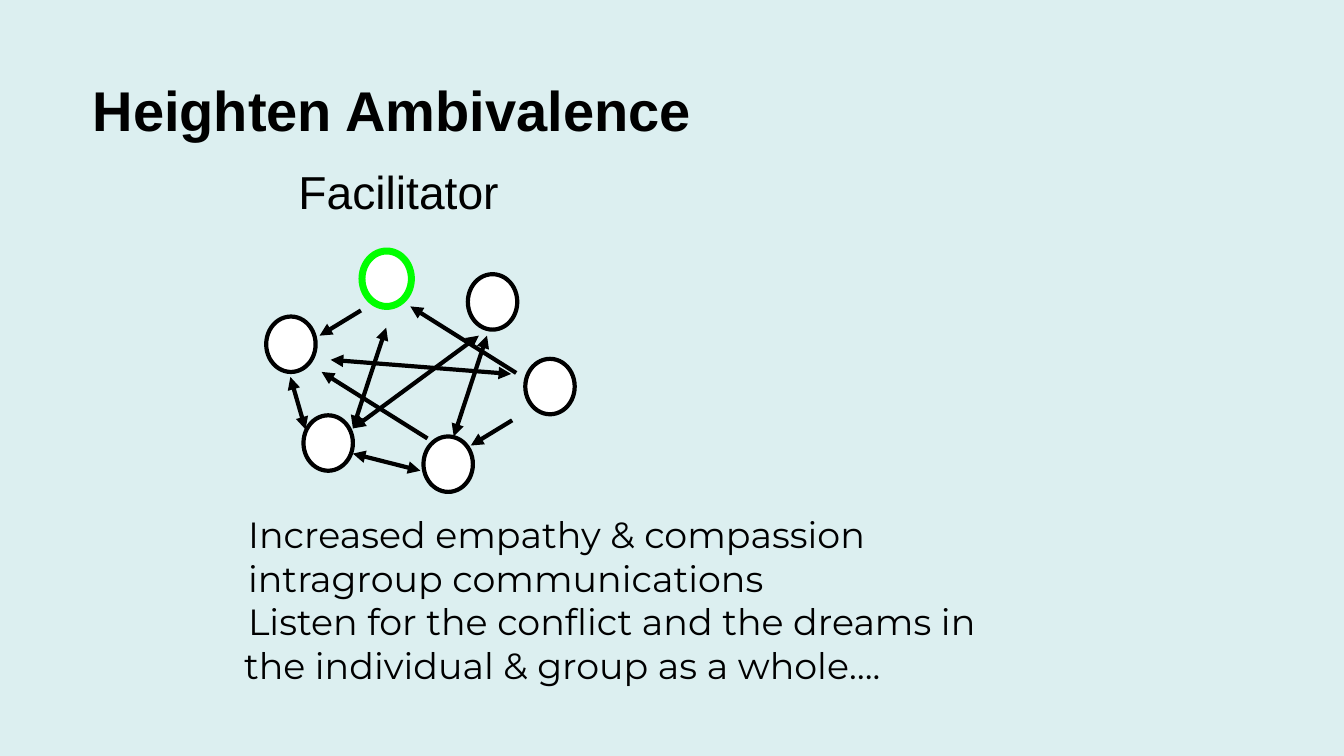
from lxml import etree
from pptx import Presentation
from pptx.dml.color import RGBColor
from pptx.enum import shapes, text
from pptx.oxml import ns
from pptx.util import Inches, Pt

BACKGROUND = RGBColor(0xDC, 0xEF, 0xF0)
BLACK = RGBColor(0, 0, 0)
WHITE = RGBColor(0xFF, 0xFF, 0xFF)
GREEN = RGBColor(0, 0xFF, 0)

TITLE = ["Heighten Ambivalence"]
LABEL = ["Facilitator"]
NOTES = [
    "Increased empathy & compassion",
    "intragroup communications",
    "Listen for the conflict and the dreams in the individual & group as a whole….",
]
MEMBER_SIZE = (0.49, 0.55)
FACILITATOR = (3.59, 2.49)
MEMBERS = [(2.64, 3.14), (3.01, 4.12), (4.64, 2.72), (4.2, 4.33), (5.21, 3.56)]
ONE_WAY = [
    (5.08, 4.17, 4.67, 4.42),
    (4.24, 4.35, 3.19, 3.69),
    (5.12, 3.7, 4.07, 3.04),
    (3.58, 3.08, 3.17, 3.33),
]
TWO_WAY = [
    (3.28, 3.57, 5.07, 3.71),
    (3.5, 4.5, 4.17, 4.67),
    (3.5, 4.25, 4.75, 3.33),
    (2.88, 3.74, 3.03, 4.26),
    (4.83, 3.33, 4.5, 4.33),
    (3.83, 3.25, 3.5, 4.25),
]


def write(sp, lines, size, font="Arial", bold=False, indent=0.0, spacing=None,
          anchor=text.MSO_ANCHOR.TOP, fit=text.MSO_AUTO_SIZE.SHAPE_TO_FIT_TEXT):
    """Fill a shape with one formatted paragraph per line."""
    tf = sp.text_frame
    tf.word_wrap = True
    tf.auto_size = fit
    tf.vertical_anchor = anchor
    tf.margin_left = tf.margin_right = tf.margin_top = tf.margin_bottom = 0
    for i, line in enumerate(lines):
        p = tf.paragraphs[0] if i == 0 else tf.add_paragraph()
        p.alignment = text.PP_ALIGN.LEFT
        p.line_spacing = spacing
        if indent:
            pPr = p._p.get_or_add_pPr()
            pPr.set("marL", "0")
            pPr.set("indent", str(Inches(indent)))
        r = p.add_run()
        r.text = line
        r.font.name, r.font.size, r.font.bold = font, Pt(size), bold
        r.font.color.rgb = BLACK


def add_text(s, box, lines, size, **fmt):
    """Add a text box with an indented first line."""
    sp = s.shapes.add_textbox(*map(Inches, box))
    write(sp, lines, size, indent=0.04, **fmt)


def add_person(s, corner, color=BLACK, width=3):
    """Add one white circle for a group member."""
    sp = s.shapes.add_shape(shapes.MSO_SHAPE.OVAL, *map(Inches, corner + MEMBER_SIZE))
    sp.shadow.inherit = False
    sp.fill.solid()
    sp.fill.fore_color.rgb = WHITE
    sp.line.color.rgb = color
    sp.line.width = Pt(width)


def add_arrow(s, ends, tags):
    """Add a connector with an arrowhead for each tag."""
    c = s.shapes.add_connector(shapes.MSO_CONNECTOR.STRAIGHT, *map(Inches, ends))
    c.line.color.rgb = BLACK
    c.line.width = Pt(3)
    for tag in tags:
        etree.SubElement(c.line._get_or_add_ln(), ns.qn(tag), type="triangle")
    etree.SubElement(c._element.spPr, ns.qn("a:effectLst"))


def main():
    """Build and save the slide."""
    prs = Presentation()
    prs.slide_width, prs.slide_height = Inches(13.33), Inches(7.5)
    s = prs.slides.add_slide(prs.slide_layouts[5])
    s.background.fill.solid()
    s.background.fill.fore_color.rgb = BACKGROUND

    title = s.shapes.title
    title.left, title.top, title.width, title.height = map(Inches, (0.92, 0.4, 11.5, 1.45))
    write(title, TITLE, 40, bold=True, spacing=0.9,
          anchor=text.MSO_ANCHOR.MIDDLE, fit=text.MSO_AUTO_SIZE.NONE)

    add_person(s, FACILITATOR, GREEN, 5)
    for corner in MEMBERS:
        add_person(s, corner)
    for ends in ONE_WAY:
        add_arrow(s, ends, ["a:tailEnd"])
    for ends in TWO_WAY:
        add_arrow(s, ends, ["a:headEnd", "a:tailEnd"])

    add_text(s, (2.92, 1.62, 5.71, 0.56), LABEL, 33)
    add_text(s, (2.42, 5.08, 7.72, 1.75), NOTES, 26, font="Montserrat")
    prs.save("out.pptx")


if __name__ == "__main__":
    main()
